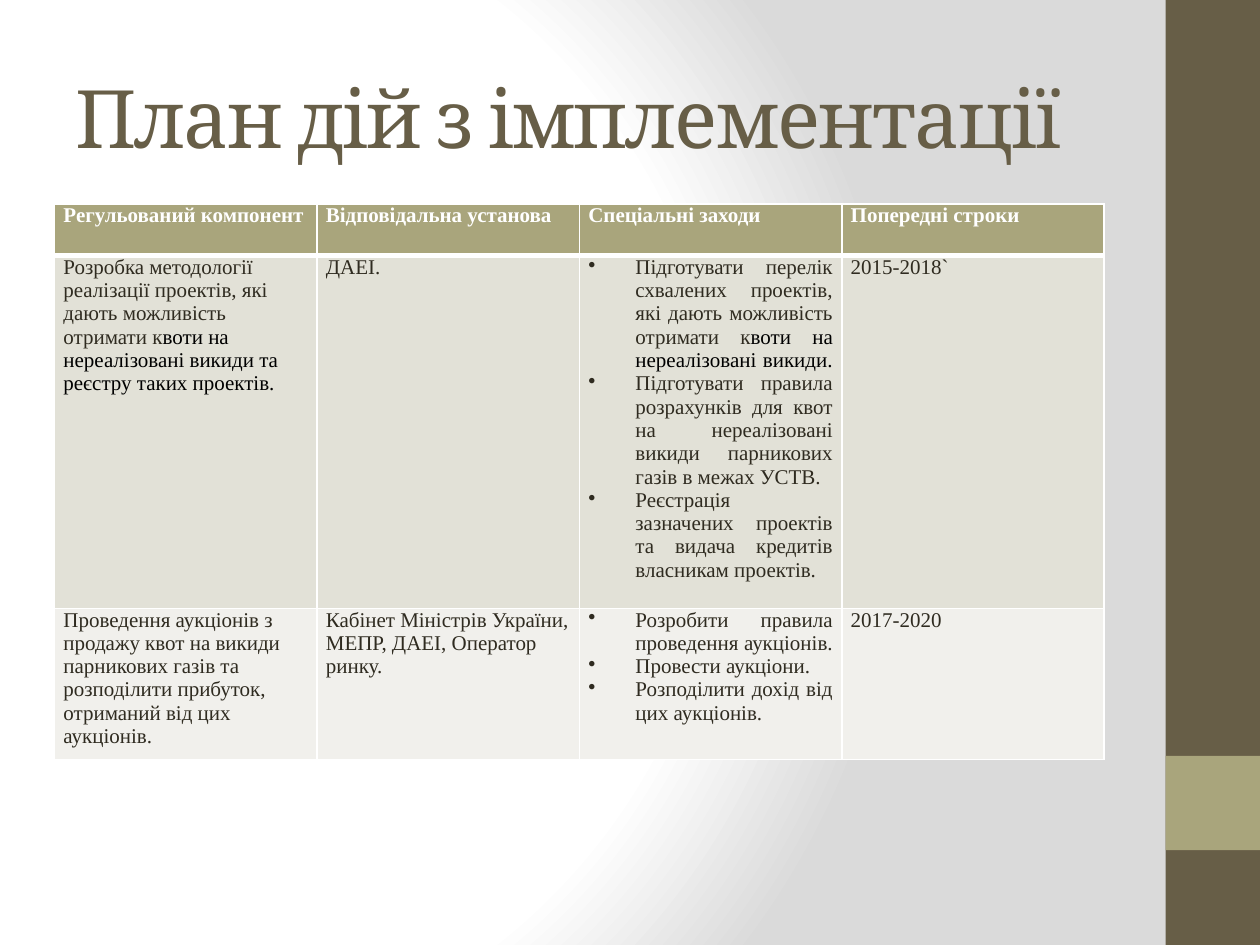
"""Build the implementation action plan slide."""
from dataclasses import dataclass

import lxml.etree
import pptx
import pptx.dml.color
import pptx.enum.shapes
import pptx.enum.text
import pptx.oxml
import pptx.oxml.ns
import pptx.util
from pptx.util import Cm

ALIGN = pptx.enum.text.PP_ALIGN


@dataclass(frozen=True)
class Theme:
    """Colours, fonts and type sizes of the slide."""
    white: str = "FFFFFF"
    shade: str = "DADADA"
    brown: str = "675E47"
    olive: str = "A9A57C"
    ink: str = "2F2B20"
    black: str = "000000"
    bands: tuple = ("A9A57C", "E2E1D7", "F1F0EC")
    title_font: str = "Cambria"
    table_font: str = "Times New Roman"
    title_size: int = 46
    table_size: int = 12
    rule: int = 1
    header_rule: int = 3


THEME = Theme()
HEADINGS = ["Регульований компонент", "Відповідальна установа",
            "Спеціальні заходи", "Попередні строки"]
METHODOLOGY = [
    [[("Розробка методології реалізації проектів, які дають можливість отримати к", THEME.ink),
      ("воти на нереалізовані викиди та реєстру таких проектів.", THEME.black)]],
    ["ДАЕІ."],
    [[("Підготувати перелік схвалених проектів, які дають можливість отримати к", THEME.ink),
      ("воти на нереалізовані викиди. ", THEME.black)],
     "Підготувати правила розрахунків для квот на нереалізовані викиди "
     "парникових газів в межах УСТВ. ",
     "Реєстрація зазначених проектів та видача кредитів власникам проектів. "],
    ["2015-2018`"],
]
AUCTIONS = [
    ["Проведення аукціонів з продажу квот на викиди парникових газів та "
     "розподілити прибуток, отриманий від цих аукціонів."],
    ["Кабінет Міністрів України, МЕПР, ДАЕІ, Оператор ринку."],
    ["Розробити правила проведення аукціонів. ", "Провести аукціони. ",
     "Розподілити дохід від цих аукціонів. "],
    ["2017-2020"],
]
PLAN = [[[heading] for heading in HEADINGS], METHODOLOGY, AUCTIONS]
ROW_HEIGHTS = (1.04, 6.58, 2.82)
MEASURES, TERMS = 2, 3


def rgb(colour):
    """Turn a hex string into a colour."""
    return pptx.dml.color.RGBColor.from_string(colour)


def paint_background(slide):
    """Fill the background with a round gradient."""
    slide.background.fill.solid()
    stops = "".join(
        f'<a:gs pos="{place * 1000}"><a:srgbClr val="{colour}"/></a:gs>'
        for place, colour in ((0, THEME.white), (75, THEME.white), (100, THEME.shade)))
    gradient = pptx.oxml.parse_xml(
        f'<a:gradFill {pptx.oxml.ns.nsdecls("a")} rotWithShape="1"><a:gsLst>{stops}</a:gsLst>'
        '<a:path path="circle"><a:fillToRect l="20000" t="50000" r="100000" b="50000"/>'
        '</a:path></a:gradFill>')
    properties = slide.element.xpath(".//p:bgPr")[0]
    properties.replace(properties[0], gradient)


def add_band(slide, top, height, colour):
    """Add a block of the right-hand side strip."""
    band = slide.shapes.add_shape(pptx.enum.shapes.MSO_SHAPE.RECTANGLE,
                                  Cm(23.5), Cm(top), Cm(1.9), Cm(height))
    band.shadow.inherit = False
    band.fill.solid()
    band.fill.fore_color.rgb = rgb(colour)
    band.line.fill.background()


def add_run(paragraph, text, font, size, colour, bold=False):
    """Add one styled run to a paragraph."""
    run = paragraph.add_run()
    run.text = text
    run.font.name = font
    run.font.size = pptx.util.Pt(size)
    run.font.bold = bold
    run.font.color.rgb = rgb(colour)
    return run


def add_title(slide, text):
    """Add the slide title."""
    frame = slide.shapes.add_textbox(Cm(1.27), Cm(0.76), Cm(21.17), Cm(3.18)).text_frame
    frame.word_wrap = True
    frame.vertical_anchor = pptx.enum.text.MSO_ANCHOR.MIDDLE
    run = add_run(frame.paragraphs[0], text, THEME.title_font, THEME.title_size, THEME.brown)
    run.font.element.set("spc", "-100") if hasattr(run.font, "element") else \
        run._r.get_or_add_rPr().set("spc", "-100")


def add_bullet(paragraph):
    """Give a paragraph a hanging bullet."""
    properties = paragraph._p.get_or_add_pPr()
    properties.set("marL", str(Cm(0.95)))
    properties.set("indent", str(-Cm(0.95)))
    bullet = lxml.etree.SubElement(properties, pptx.oxml.ns.qn("a:buChar"))
    bullet.set("char", "•")


def rule_cell(cell, top, bottom):
    """Draw the white borders of a cell."""
    widths = {"L": THEME.rule, "R": THEME.rule, "T": top, "B": bottom}
    for side, width in widths.items():
        cell._tc.get_or_add_tcPr().append(pptx.oxml.parse_xml(
            f'<a:ln{side} {pptx.oxml.ns.nsdecls("a")} w="{pptx.util.Pt(width)}">'
            f'<a:solidFill><a:srgbClr val="{THEME.white}"/></a:solidFill></a:ln{side}>'))


def fill_cell(cell, entries, row, column):
    """Write the entries of one cell and style it."""
    header = row == 0
    rule_cell(cell, THEME.header_rule if row == 1 else THEME.rule,
              THEME.header_rule if header else THEME.rule)
    cell.fill.solid()
    cell.fill.fore_color.rgb = rgb(THEME.bands[row])
    cell.margin_left = cell.margin_right = Cm(0.18)
    cell.margin_top = cell.margin_bottom = 0
    frame = cell.text_frame
    for number, entry in enumerate(entries):
        paragraph = frame.add_paragraph() if number else frame.paragraphs[0]
        justified = header or column in (MEASURES, TERMS)
        paragraph.alignment = ALIGN.JUSTIFY if justified else ALIGN.LEFT
        if column == MEASURES and not header:
            add_bullet(paragraph)
        plain = [(entry, THEME.white if header else THEME.ink)]
        for text, colour in plain if isinstance(entry, str) else entry:
            add_run(paragraph, text, THEME.table_font, THEME.table_size, colour, header)


def add_plan(slide):
    """Add the action plan table."""
    plan = slide.shapes.add_table(len(PLAN), len(HEADINGS), Cm(1.1), Cm(4.11),
                                  Cm(21.16), Cm(sum(ROW_HEIGHTS))).table
    for row, (height, entries_by_column) in enumerate(zip(ROW_HEIGHTS, PLAN)):
        plan.rows[row].height = Cm(height)
        for column, entries in enumerate(entries_by_column):
            fill_cell(plan.cell(row, column), entries, row, column)


def main():
    """Build and save the slide."""
    deck = pptx.Presentation()
    deck.slide_width, deck.slide_height = Cm(25.4), Cm(19.05)
    slide = deck.slides.add_slide(deck.slide_layouts[6])
    paint_background(slide)
    add_band(slide, 0, 19.05, THEME.brown)
    add_band(slide, 15.24, 1.9, THEME.olive)
    add_title(slide, "План дій з імплементації")
    add_plan(slide)
    deck.save("out.pptx")


if __name__ == "__main__":
    main()
